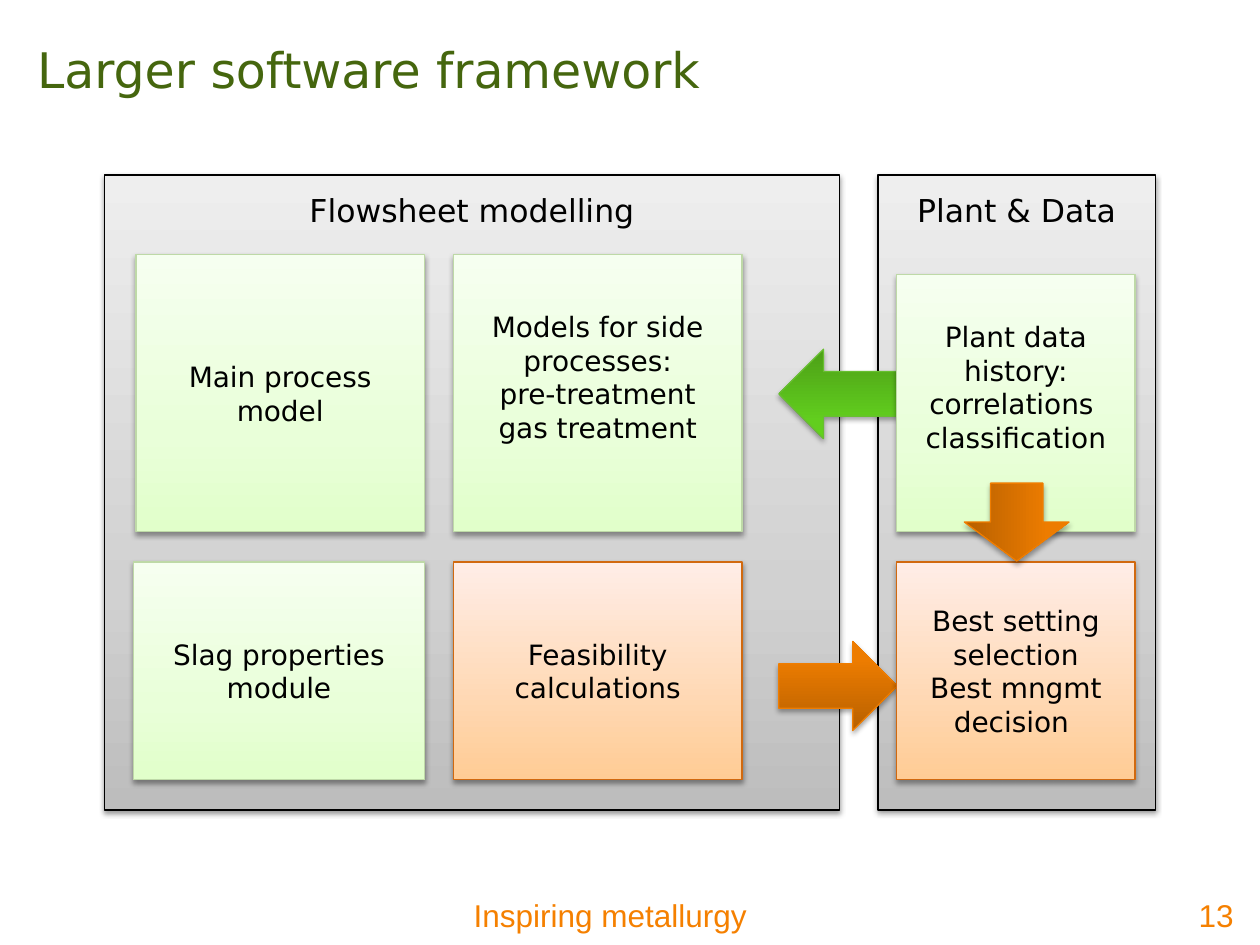
from dataclasses import dataclass

from lxml.etree import SubElement
from pptx import Presentation
from pptx.dml.color import RGBColor
from pptx.enum.shapes import MSO_SHAPE
from pptx.enum.text import MSO_ANCHOR, PP_ALIGN
from pptx.oxml.ns import qn
from pptx.slide import Slide
from pptx.text.text import TextFrame
from pptx.util import Cm, Pt

COLORS = {
    "black": "000000",
    "title": "45660E",
    "footer": "F58000",
    "mint edge": "BED9A7",
    "peach edge": "D1690F",
    "orange edge": "F07D00",
    "green edge": "67BF2F",
}


@dataclass
class Look:
    stops: list[tuple[int, str]]
    edge: str
    alpha: int = 38
    drop: float = 1.6


@dataclass
class Block:
    x: float
    y: float
    w: float
    h: float
    look: Look
    lines: tuple[str, ...] = ()
    size: int = 16
    foot: float = 0.13
    head: float = 0.13
    anchor: MSO_ANCHOR = MSO_ANCHOR.MIDDLE
    kind: MSO_SHAPE = MSO_SHAPE.RECTANGLE
    turn: int = 0


@dataclass
class Label:
    x: float
    y: float
    w: float
    h: float
    text: str
    size: int
    font: str
    color: str
    align: PP_ALIGN = PP_ALIGN.LEFT
    anchor: MSO_ANCHOR = MSO_ANCHOR.TOP


GRAY = Look([(0, "BDBDBD"), (35, "D1D1D1"), (100, "EEEEEE")], "black")
MINT = Look([(0, "E1FFCA"), (35, "E9FFD9"), (100, "F6FFF0")], "mint edge")
PEACH = Look([(0, "FFCC95"), (100, "FFEDE7")], "peach edge")
ORANGE = Look([(0, "B76000"), (80, "ED7C00"), (100, "EE7D00")], "orange edge", 35, 1.8)
GREEN = Look([(0, "4C9F17"), (80, "62CE1E"), (100, "62D31B")], "green edge", 35, 1.8)

SANS = "DejaVu Sans"
LEFT, MID, RIGHT = 2.74, 9.14, 18.08
TOP, LOW = 5.13, 11.33
WIDE, SLIM = 5.82, 4.8
TALL, SHORT = 5.59, 4.39
RAISE = 0.79
PANEL = {"size": 18, "head": 0.33, "anchor": MSO_ANCHOR.TOP}
ARROW = {"kind": MSO_SHAPE.RIGHT_ARROW}

BLOCKS = [
    Block(2.11, 3.53, 14.81, 12.8, GRAY, ("Flowsheet modelling",), **PANEL),
    Block(17.7, 3.53, 5.59, 12.8, GRAY, ("Plant & Data",), **PANEL),
    Block(LEFT - 0.05, LOW, WIDE + 0.05, SHORT, MINT, ("Slag properties module",)),
    Block(LEFT, TOP, WIDE, TALL, MINT, ("Main process model",)),
    Block(MID, TOP, WIDE, TALL, MINT,
          ("Models for side processes:", "pre-treatment", "gas treatment"), foot=RAISE),
    Block(MID, LOW, WIDE, SHORT, PEACH, ("Feasibility calculations",)),
    Block(15.7, 12.93, 2.39, 1.8, ORANGE, **ARROW),
    Block(15.7, 7.04, 2.39, 1.8, GREEN, turn=180, **ARROW),
    Block(RIGHT, 5.54, SLIM, 5.18, MINT,
          ("Plant data history: correlations  classification",), foot=RAISE),
    Block(RIGHT, LOW, SLIM, SHORT, PEACH,
          ("Best setting selection", "Best mngmt decision ")),
    Block(19.71, 9.47, 1.57, 2.11, ORANGE, turn=90, **ARROW),
]

LABELS = [
    Label(0.5, 0.1, 22.86, 2.6, "Larger software framework", 28, SANS, "title",
          anchor=MSO_ANCHOR.MIDDLE),
    Label(9.3, 17.93, 6.17, 1.02, "Inspiring metallurgy", 18, "Arial", "footer"),
    Label(22.91, 17.93, 2.21, 1.12, "13", 18, "Arial", "footer", PP_ALIGN.RIGHT),
]


def apply(target: object, form: dict) -> None:
    for name, value in form.items():
        setattr(target, name, value)


def write(frame: TextFrame, lines: tuple[str, ...], size: int, font: str,
          color: str, align: PP_ALIGN) -> None:
    frame.text = "\n".join(lines)
    for para in frame.paragraphs:
        para.alignment = align
        for run in para.runs:
            apply(run.font, {"size": Pt(size), "name": font})
            run.font.color.rgb = RGBColor.from_string(COLORS[color])


def tint(parent: object, code: str) -> object:
    return SubElement(parent, qn("a:srgbClr"), val=code)


def paint(shape: object, look: Look) -> None:
    shape.fill.gradient()
    shape.fill.gradient_angle = 90
    props = shape._element.spPr
    stops = props.find(".//" + qn("a:gsLst"))
    for stop in list(stops):
        stops.remove(stop)
    for place, code in look.stops:
        tint(SubElement(stops, qn("a:gs"), pos=str(place * 1000)), code)
    shape.line.color.rgb = RGBColor.from_string(COLORS[look.edge])
    shape.line.width = Pt(0.75)
    shape.shadow.inherit = False
    shade = SubElement(props.find(qn("a:effectLst")), qn("a:outerShdw"),
                       blurRad=str(Pt(3.1)), dist=str(Pt(look.drop)),
                       dir="5400000", rotWithShape="0")
    SubElement(tint(shade, COLORS["black"]), qn("a:alpha"), val=str(look.alpha * 1000))


def draw(slide: Slide, block: Block) -> None:
    shape = slide.shapes.add_shape(
        block.kind, Cm(block.x), Cm(block.y), Cm(block.w), Cm(block.h))
    shape.rotation = block.turn
    paint(shape, block.look)
    if block.lines:
        apply(shape.text_frame, {
            "word_wrap": True,
            "vertical_anchor": block.anchor,
            "margin_top": Cm(block.head),
            "margin_bottom": Cm(block.foot),
        })
        write(shape.text_frame, block.lines, block.size, SANS, "black", PP_ALIGN.CENTER)


def place(slide: Slide, label: Label) -> None:
    box = slide.shapes.add_textbox(
        Cm(label.x), Cm(label.y), Cm(label.w), Cm(label.h))
    apply(box.text_frame, {"word_wrap": True, "vertical_anchor": label.anchor})
    write(box.text_frame, (label.text,), label.size, label.font, label.color, label.align)


def main() -> None:
    deck = Presentation()
    apply(deck, {"slide_width": Cm(25.4), "slide_height": Cm(19.05)})
    slide = deck.slides.add_slide(deck.slide_layouts[6])
    for label in LABELS:
        place(slide, label)
    for block in BLOCKS:
        draw(slide, block)
    deck.save("out.pptx")


if __name__ == "__main__":
    main()
